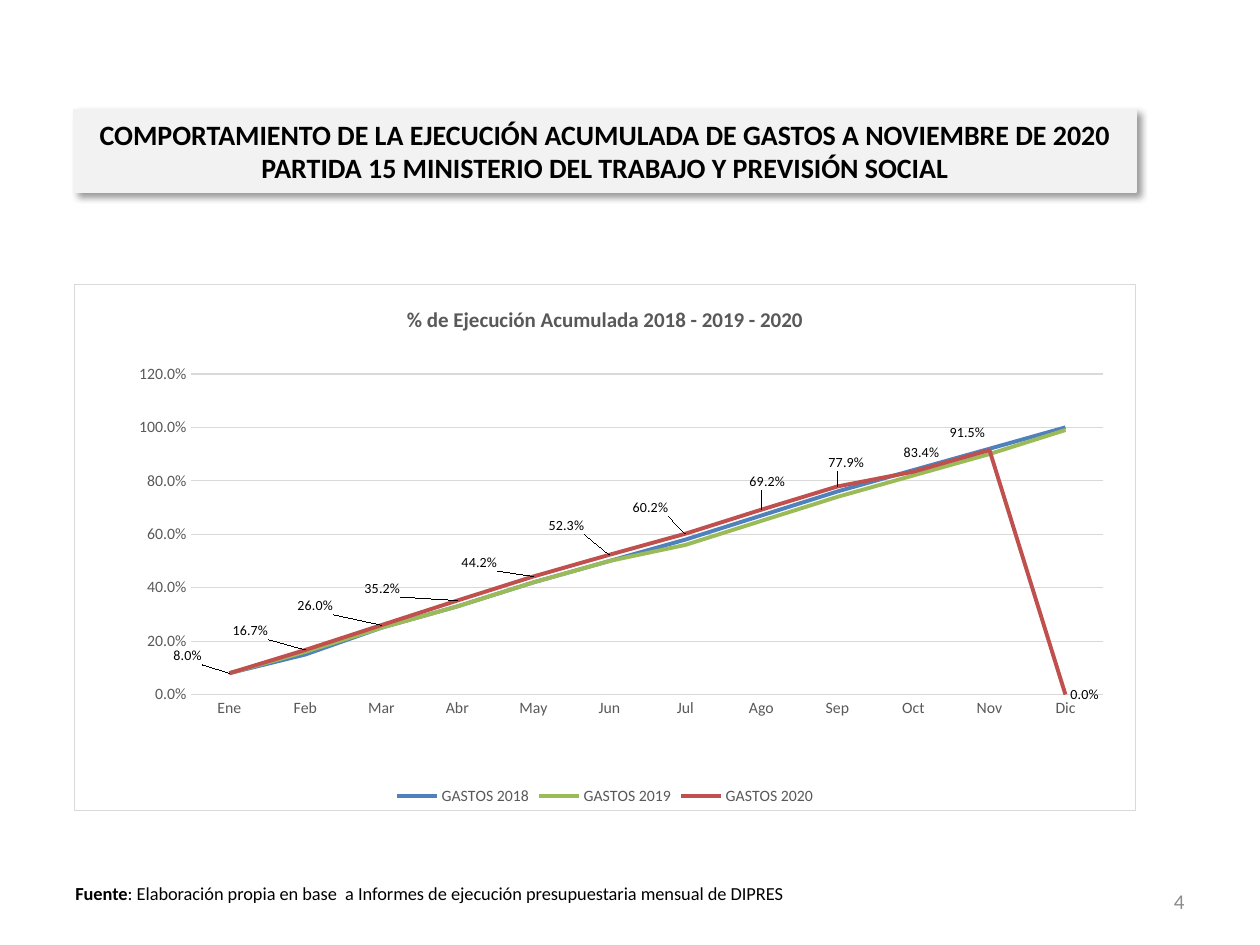
from pptx import Presentation
from pptx.chart.data import CategoryChartData
from pptx.dml.color import RGBColor
from pptx.enum.chart import XL_CHART_TYPE, XL_LABEL_POSITION, XL_LEGEND_POSITION, XL_TICK_MARK
from pptx.enum.text import MSO_ANCHOR, PP_ALIGN
from pptx.oxml import parse_xml
from pptx.oxml.ns import nsdecls, qn
from pptx.util import Emu, Pt

TITLE = ("COMPORTAMIENTO DE LA EJECUCIÓN ACUMULADA DE GASTOS A NOVIEMBRE DE 2020\v"
         "PARTIDA 15 MINISTERIO DEL TRABAJO Y PREVISIÓN SOCIAL")
SOURCE = [("Fuente", True),
          (": Elaboración propia en base  a Informes de ejecución presupuestaria mensual de DIPRES", False)]
NUMBER = "4"
HEADING = "% de Ejecución Acumulada 2018 - 2019 - 2020"
MONTHS = "Ene Feb Mar Abr May Jun Jul Ago Sep Oct Nov Dic".split()
SPENDING = [
    ("GASTOS 2018", "4F81BD", [.08, .15, .25, .33, .42, .5, .58, .67, .76, .84, .92, 1]),
    ("GASTOS 2019", "9BBB59", [.08, .16, .25, .33, .42, .5, .56, .65, .74, .82, .9, .99]),
    ("GASTOS 2020", "C0504D",
     [.08, .167, .26, .352, .442, .523, .602, .692, .779, .834, .915, 0]),
]
# Shift of each 2020 label, Ene to Nov, from its place right of the point, in px
SHIFTS = [(-61, -17), (-78, -19), (-89, -19), (-98, -12), (-77, -14), (-66, -29),
          (-58, -26), (-17, -28), (-14, -24), (-15, -19), (-45, -17)]

# Left, top, width, height in px
BOXES = {
    "title": (74, 110, 1062, 82),
    "chart": (74, 284, 1062, 527),
    "source": (63, 876, 745, 35),
    "number": (903, 876, 294, 50),
}
PLOT = {"x": .11, "y": .17, "w": .86, "h": .61}
PERCENT = "0.0%"


class Theme:
    font = "Calibri"
    ink, gray, pale = "000000", "595959", "8C8C8C"
    rule, panel, white = "D9D9D9", "F2F2F2", "FFFFFF"
    title, heading, number, source, axis, label = 16, 12, 12, 10.5, 9, 8
    thin, thick = .75, 2.25


def px(n):
    return Emu(round(n * 914400 / 126))


def place(name):
    return [px(n) for n in BOXES[name]]


def style(font, size, color, bold=False):
    font.name, font.size, font.bold = Theme.font, Pt(size), bold
    font.color.rgb = RGBColor.from_string(color)


def stroke(line, color, width):
    line.color.rgb = RGBColor.from_string(color)
    line.width = Pt(width)


def layout(inner, **sizes):
    """Return a manual chart layout; sizes are shares of the chart."""
    parts = "".join(f'<c:{key} val="{val:.4f}"/>' for key, val in sizes.items())
    return parse_xml(f'<c:layout {nsdecls("c")}><c:manualLayout>{inner}{parts}'
                     '</c:manualLayout></c:layout>')


def add_title(slide):
    box = slide.shapes.title
    box.left, box.top, box.width, box.height = place("title")
    box.fill.solid()
    box.fill.fore_color.rgb = RGBColor.from_string(Theme.panel)
    stroke(box.line, Theme.panel, Theme.thin)
    box._element.spPr.append(parse_xml(
        f'<a:effectLst {nsdecls("a")}><a:outerShdw blurRad="50800" dist="38100" '
        'dir="2700000" algn="tl" rotWithShape="0">'
        f'<a:srgbClr val="{Theme.ink}"><a:alpha val="40000"/></a:srgbClr>'
        '</a:outerShdw></a:effectLst>'))
    frame = box.text_frame
    frame.text = TITLE
    frame.word_wrap = True
    frame.vertical_anchor = MSO_ANCHOR.MIDDLE
    para = frame.paragraphs[0]
    para.alignment = PP_ALIGN.CENTER
    style(para.font, Theme.title, Theme.ink, True)


def add_text(slide, name, runs, size, color, align=PP_ALIGN.LEFT, anchor=MSO_ANCHOR.TOP):
    frame = slide.shapes.add_textbox(*place(name)).text_frame
    frame.word_wrap = True
    frame.vertical_anchor = anchor
    para = frame.paragraphs[0]
    para.alignment = align
    style(para.font, size, color)
    for text, bold in runs:
        run = para.add_run()
        run.text = text
        run.font.bold = bold


def style_axes(chart):
    months, share = chart.category_axis, chart.value_axis
    for axis in (months, share):
        axis.major_tick_mark = axis.minor_tick_mark = XL_TICK_MARK.NONE
        style(axis.tick_labels.font, Theme.axis, Theme.gray)
    stroke(months.format.line, Theme.rule, Theme.thin)
    share.format.line.fill.background()
    share.minimum_scale, share.maximum_scale, share.major_unit = 0, 1.2, .2
    share.has_major_gridlines = True
    stroke(share.major_gridlines.format.line, Theme.rule, Theme.thin)
    share.tick_labels.number_format = PERCENT
    share.tick_labels.number_format_is_linked = False


def label_points(series):
    labels = series.data_labels
    labels.show_value = True
    labels.number_format, labels.number_format_is_linked = PERCENT, False
    labels.position = XL_LABEL_POSITION.RIGHT
    style(labels.font, Theme.label, Theme.ink)
    wide, high = BOXES["chart"][2:]
    for i, (dx, dy) in enumerate(SHIFTS):
        label = series.points[i].data_label
        style(label.font, Theme.label, Theme.ink)
        label.position = XL_LABEL_POSITION.RIGHT
    for item, (dx, dy) in zip(labels._element.findall(qn("c:dLbl")), SHIFTS):
        index = item.find(qn("c:idx"))
        index.addnext(parse_xml(
            f'<c:numFmt {nsdecls("c")} formatCode="{PERCENT}" sourceLinked="0"/>'))
        index.addnext(layout("", x=dx / wide, y=dy / high))


def frame_chart(chart):
    """Give the chart its fill and border, and fix the plot area."""
    body = chart._chartSpace.find(qn("c:chart"))
    body.addnext(parse_xml(
        f'<c:spPr {nsdecls("c", "a")}>'
        f'<a:solidFill><a:srgbClr val="{Theme.white}"/></a:solidFill>'
        f'<a:ln w="{Pt(Theme.thin)}"><a:solidFill><a:srgbClr val="{Theme.rule}"/>'
        '</a:solidFill></a:ln></c:spPr>'))
    area = body.find(qn("c:plotArea"))
    for old in area.findall(qn("c:layout")):
        area.remove(old)
    inner = ('<c:layoutTarget val="inner"/><c:xMode val="edge"/><c:yMode val="edge"/>')
    area.insert(0, layout(inner, **PLOT))


def add_chart(slide):
    data = CategoryChartData(number_format=PERCENT)
    data.categories = MONTHS
    for name, _, values in SPENDING:
        data.add_series(name, values)
    chart = slide.shapes.add_chart(XL_CHART_TYPE.LINE, *place("chart"), data).chart
    style(chart.font, 10, Theme.ink)
    chart.has_title = True
    para = chart.chart_title.text_frame.paragraphs[0]
    para.text = HEADING
    style(para.font, Theme.heading, Theme.gray, True)
    chart.chart_title.include_in_layout = False
    chart.has_legend = True
    chart.legend.position = XL_LEGEND_POSITION.BOTTOM
    chart.legend.include_in_layout = False
    style(chart.legend.font, Theme.axis, Theme.gray)
    style_axes(chart)
    plot = chart.plots[0]
    plot.vary_by_categories = False
    for series, (_, color, _) in zip(plot.series, SPENDING):
        series.smooth = False
        stroke(series.format.line, color, Theme.thick)
    label_points(plot.series[-1])
    frame_chart(chart)


def main():
    deck = Presentation()
    deck.slide_width, deck.slide_height = px(1260), px(945)
    slide = deck.slides.add_slide(deck.slide_layouts.get_by_name("Title Only"))
    add_title(slide)
    add_chart(slide)
    add_text(slide, "source", SOURCE, Theme.source, Theme.ink)
    add_text(slide, "number", [(NUMBER, False)], Theme.number, Theme.pale,
             PP_ALIGN.RIGHT, MSO_ANCHOR.MIDDLE)
    deck.save("out.pptx")


if __name__ == "__main__":
    main()
